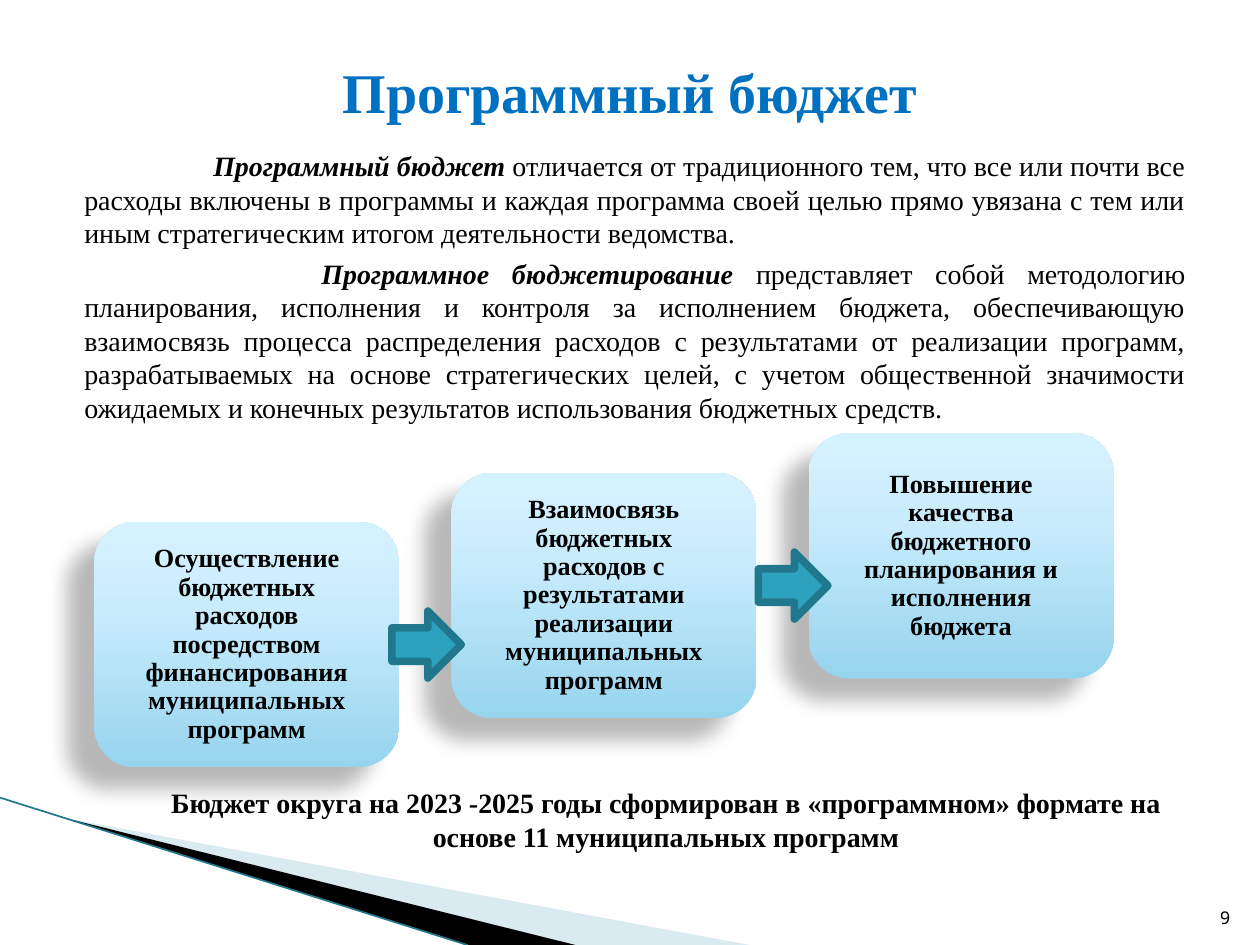
from dataclasses import dataclass

from lxml import etree
from pptx import Presentation
from pptx.dml.color import RGBColor
from pptx.enum.shapes import MSO_CONNECTOR, MSO_SHAPE
from pptx.enum.text import MSO_ANCHOR, PP_ALIGN
from pptx.oxml import parse_xml
from pptx.oxml.ns import nsdecls, qn
from pptx.util import Cm, Pt

ROUNDED, RIGHT_ARROW = MSO_SHAPE.ROUNDED_RECTANGLE, MSO_SHAPE.RIGHT_ARROW
STRAIGHT = MSO_CONNECTOR.STRAIGHT
TOP, MIDDLE, BOTTOM = MSO_ANCHOR.TOP, MSO_ANCHOR.MIDDLE, MSO_ANCHOR.BOTTOM
CENTER, RIGHT, JUSTIFY = PP_ALIGN.CENTER, PP_ALIGN.RIGHT, PP_ALIGN.JUSTIFY
TITLE_ONLY = 5


@dataclass(frozen=True)
class Theme:
    serif: str = "Times New Roman"
    sans: str = "Noto Sans Mono"
    title_size: int = 32
    body_size: int = 16
    card_size: int = 15
    number_size: int = 10
    ink: str = "000000"
    title: str = "0070C0"
    arrow: str = "2DA2BF"
    arrow_edge: str = "21788D"
    wedge: str = "A0CBDC"
    card_stops: tuple = ((0, "96D4EE"), (65, "C9ECFC"), (100, "D7F2FF"))


class SlideBuilder:
    def __init__(self, slide, theme):
        self.slide, self.theme = slide, theme

    def add_text(self, paragraph, text, size, color=None, **formats):
        run = paragraph.add_run()
        run.text = text
        values = {"name": self.theme.serif, "size": Pt(size), "bold": True, **formats}
        for attribute, value in values.items():
            setattr(run.font, attribute, value)
        run.font.color.rgb = RGBColor.from_string(color or self.theme.ink)

    def frame(self, shape, anchor=TOP, **formats):
        for attribute, value in {"word_wrap": True, "vertical_anchor": anchor, **formats}.items():
            setattr(shape.text_frame, attribute, value)
        return shape.text_frame

    def title(self, text, left, top, width, height):
        holder = self.slide.shapes.title
        box = {"left": left, "top": top, "width": width, "height": height}
        for attribute, value in box.items():
            setattr(holder, attribute, Cm(value))
        paragraph = self.frame(holder, MIDDLE).paragraphs[0]
        paragraph.alignment = CENTER
        self.add_text(paragraph, text, self.theme.title_size, self.theme.title)

    def text_box(self, box, anchor=TOP):
        return self.frame(self.slide.shapes.add_textbox(*map(Cm, box)), anchor)

    def label(self, text, box, size, align, anchor=TOP, **formats):
        paragraph = self.text_box(box, anchor).paragraphs[0]
        paragraph.alignment = align
        self.add_text(paragraph, text, size, **formats)

    def definitions(self, entries, box):
        """Justified paragraphs, each opening with an indented emphasised term."""
        frame = self.text_box(box)
        for index, (term, meaning, indent) in enumerate(entries):
            paragraph = frame.add_paragraph() if index else frame.paragraphs[0]
            paragraph.alignment = JUSTIFY
            if index:
                paragraph.space_before = Pt(4)
            paragraph._p.get_or_add_pPr().set("indent", str(Cm(indent)))
            self.add_text(paragraph, term + " ", self.theme.body_size, italic=True)
            self.add_text(paragraph, meaning, self.theme.body_size, bold=False)

    def card(self, text, left, top, width, height):
        shape = self.slide.shapes.add_shape(ROUNDED, *map(Cm, (left, top, width, height)))
        shape.line.fill.background()
        stops = "".join(
            f'<a:gs pos="{position * 1000}"><a:srgbClr val="{color}"/></a:gs>'
            for position, color in self.theme.card_stops)
        gradient = parse_xml(
            f'<a:gradFill {nsdecls("a")} rotWithShape="1"><a:gsLst>{stops}</a:gsLst>'
            '<a:lin ang="16200000" scaled="0"/></a:gradFill>')
        shadow = parse_xml(
            f'<a:effectLst {nsdecls("a")}><a:outerShdw blurRad="{Pt(11.8)}" '
            f'dist="{Pt(19.7)}" dir="{141 * 60000}" algn="ctr" rotWithShape="0">'
            f'<a:srgbClr val="{self.theme.ink}"><a:alpha val="28000"/></a:srgbClr>'
            '</a:outerShdw></a:effectLst>')
        properties = shape._element.spPr
        properties.find(qn("a:prstGeom")).addnext(gradient)
        properties.append(shadow)
        side, edge = Cm(0.36), Cm(0.32)
        paragraph = self.frame(shape, MIDDLE, margin_left=side, margin_right=side,
                               margin_top=edge, margin_bottom=edge).paragraphs[0]
        paragraph.alignment, paragraph.line_spacing = CENTER, 0.9
        self.add_text(paragraph, text, self.theme.card_size)

    def arrow(self, left, top, width, height):
        shape = self.slide.shapes.add_shape(RIGHT_ARROW, *map(Cm, (left, top, width, height)))
        shape.shadow.inherit = False
        shape.fill.solid()
        shape.fill.fore_color.rgb = RGBColor.from_string(self.theme.arrow)
        shape.line.color.rgb = RGBColor.from_string(self.theme.arrow_edge)
        shape.line.width = Pt(4.33)

    def wedge(self, corners, color, opacity=100):
        start, *others = [(Cm(x), Cm(y)) for x, y in corners]
        outline = self.slide.shapes.build_freeform(*start)
        outline.add_line_segments(others, close=True)
        shape = outline.convert_to_shape()
        shape.shadow.inherit = False
        shape.line.fill.background()
        shape.fill.solid()
        shape.fill.fore_color.rgb = RGBColor.from_string(color)
        if opacity < 100:
            tint = shape._element.spPr.find(qn("a:solidFill"))[0]
            etree.SubElement(tint, qn("a:alpha")).set("val", str(opacity * 1000))

    def line(self, *ends):
        connector = self.slide.shapes.add_connector(STRAIGHT, *map(Cm, ends))
        connector.line.color.rgb = RGBColor.from_string(self.theme.arrow_edge)
        connector.line.width = Pt(0.95)
        etree.SubElement(connector._element.spPr, qn("a:effectLst"))


DEFINITIONS = [
    ("Программный бюджет",
     "отличается от традиционного тем, что все или почти все расходы включены в программы "
     "и каждая программа своей целью прямо увязана с тем или иным стратегическим итогом "
     "деятельности ведомства.", 2.6),
    ("Программное бюджетирование",
     "представляет собой методологию планирования, исполнения и контроля за исполнением "
     "бюджета, обеспечивающую взаимосвязь процесса распределения расходов с результатами "
     "от реализации программ, разрабатываемых на основе стратегических целей, с учетом "
     "общественной значимости ожидаемых и конечных результатов использования бюджетных "
     "средств.", 4.78),
]
STEPS = [
    ("Осуществление бюджетных расходов посредством финансирования муниципальных программ", 10.52),
    ("Взаимосвязь бюджетных расходов с результатами реализации муниципальных программ", 9.53),
    ("Повышение качества бюджетного планирования и исполнения бюджета", 8.73),
]
ARROWS = [(7.9, 12.32), (15.29, 11.13)]


def main():
    presentation = Presentation()
    presentation.slide_width, presentation.slide_height = Cm(25.4), Cm(19.05)
    slide = presentation.slides.add_slide(presentation.slide_layouts[TITLE_ONLY])
    theme = Theme()
    builder = SlideBuilder(slide, theme)

    builder.wedge([(1.4, 16.51), (15.11, 19.05), (11.58, 19.05)], theme.wedge, 40)
    builder.wedge([(1.35, 16.5), (11.6, 19.05), (9.45, 19.05)], theme.ink)
    builder.line(0, 16.08, 9.42, 19.05)

    builder.title("Программный бюджет", 1.27, 0.76, 22.86, 2.16)
    builder.definitions(DEFINITIONS, (1.45, 2.87, 22.7, 5.9))
    for index, (text, top) in enumerate(STEPS):
        builder.card(text, 1.9 + 7.2 * index, top, 6.15, 4.95)
    for left, top in ARROWS:
        builder.arrow(left, top, 1.4, 1.35)
    builder.label("Бюджет округа на 2023 -2025 годы сформирован в «программном» формате "
                  "на основе 11 муниципальных программ",
                  (3.1, 15.72, 20.65, 1.63), theme.body_size, CENTER)
    builder.label("9", (24.03, 17.81, 1.02, 1.02), theme.number_size, RIGHT, BOTTOM,
                  name=theme.sans, bold=False)
    presentation.save("out.pptx")


if __name__ == "__main__":
    main()
